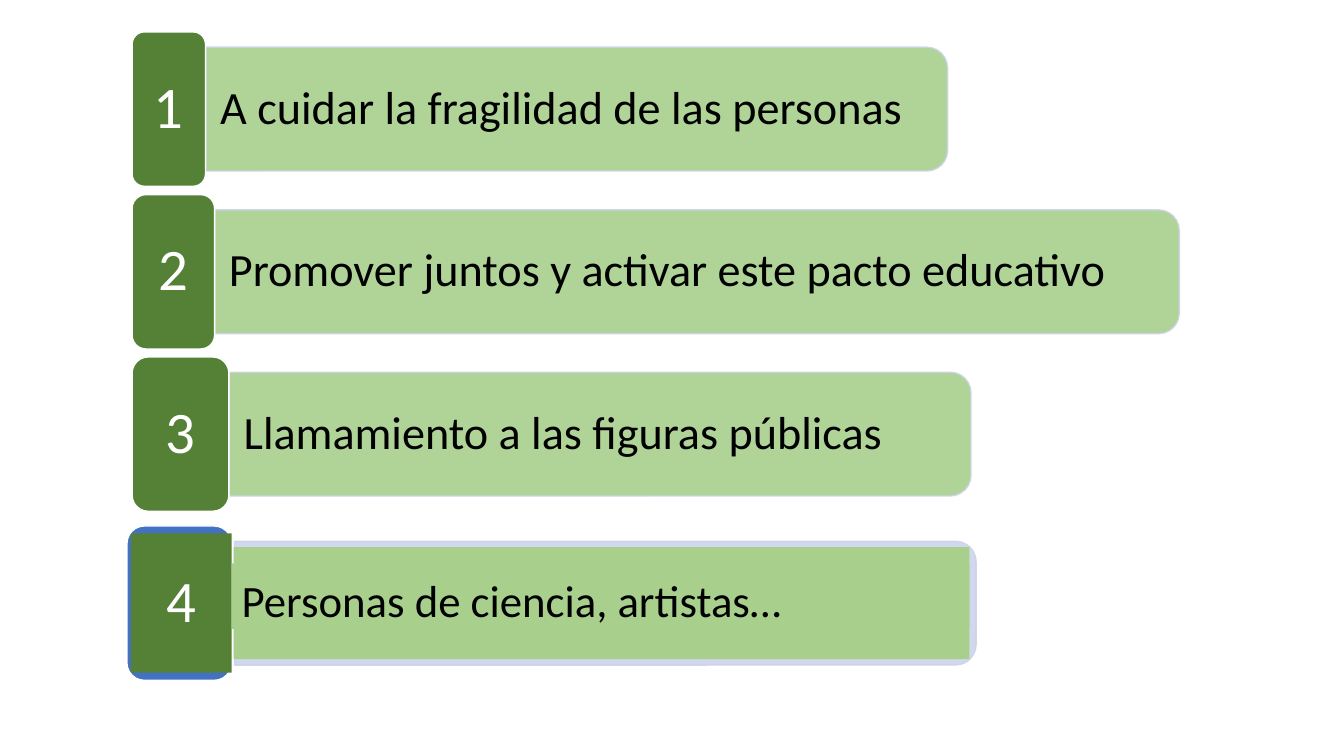
from lxml import etree
from pptx import Presentation
from pptx.dml.color import RGBColor
from pptx.enum.shapes import MSO_SHAPE
from pptx.enum.text import MSO_ANCHOR, PP_ALIGN
from pptx.oxml.ns import qn
from pptx.util import Cm, Pt

RECT = MSO_SHAPE.RECTANGLE
ROUNDED = MSO_SHAPE.ROUNDED_RECTANGLE
ROUND_TOP = MSO_SHAPE.ROUND_2_SAME_RECTANGLE
MIDDLE, TOP = MSO_ANCHOR.MIDDLE, MSO_ANCHOR.TOP
LEFT, CENTER = PP_ALIGN.LEFT, PP_ALIGN.CENTER

DARK_GREEN, LIGHT_GREEN = "548135", "A8D08C"
BLUE, LAVENDER = "4372C3", "CCD3EA"
WHITE, BLACK = "FFFFFF", "000000"

TAB_H, BAR_H, PANEL_H = 3.89, 3.12, 2.82


def add_box(kind, x, y, w, h, fill, line=None, alpha=None):
    """Add a preset shape; lengths in cm, alpha in percent."""
    sp = s.shapes.add_shape(kind, Cm(x), Cm(y), Cm(w), Cm(h))
    sp.shadow.inherit = False
    sp.fill.solid()
    sp.fill.fore_color.rgb = RGBColor.from_string(fill)
    if line:
        sp.line.color.rgb = RGBColor.from_string(line)
        sp.line.width = Pt(1)
    else:
        sp.line.fill.background()
    if alpha:
        for color in sp._element.spPr.iter(qn("a:srgbClr")):
            etree.SubElement(color, qn("a:alpha"), val=str(alpha * 1000))
    return sp


def write(sp, text, size, color, align, spacing=0.9, anchor=MIDDLE, inset=(0, 0)):
    """Put one line of text in a shape; inset is (side, top) in cm."""
    tf = sp.text_frame
    tf.word_wrap = True
    tf.vertical_anchor = anchor
    tf.margin_left = tf.margin_right = Cm(inset[0])
    tf.margin_top = tf.margin_bottom = Cm(inset[1])
    p = tf.paragraphs[0]
    p.text = text
    p.alignment = align
    p.line_spacing = spacing
    p.font.name = "Calibri"
    p.font.size = Pt(size)
    p.font.color.rgb = RGBColor.from_string(color)


prs = Presentation()
prs.slide_width, prs.slide_height = Cm(33.87), Cm(19.05)
s = prs.slides.add_slide(prs.slide_layouts[6])

# Rows: centre y, tab x, tab width, tab fill, bar x, bar length, bar fill, label
rows = [
    (2.75, 3.33, 1.85, DARK_GREEN, 5.19, 18.69, LIGHT_GREEN,
     "A cuidar la fragilidad de las personas"),
    (6.85, 3.33, 2.08, DARK_GREEN, 5.41, 24.31, LIGHT_GREEN,
     "Promover juntos y activar este pacto educativo"),
    (10.94, 3.33, 2.44, DARK_GREEN, 5.78, 18.69, LIGHT_GREEN,
     "Llamamiento a las figuras públicas"),
    (15.2, 3.2, 2.64, BLUE, 5.91, 18.69, LAVENDER, None),
]
for number, row in enumerate(rows, 1):
    cy, tab_x, tab_w, tab_fill, bar_x, bar_w, bar_fill, label = row

    # Bar, turned so that its rounded corners face right
    bar = add_box(ROUND_TOP, bar_x + (bar_w - BAR_H) / 2, cy - bar_w / 2,
                  BAR_H, bar_w, bar_fill, LAVENDER, 90)
    bar.rotation = 90
    bar.adjustments[0], bar.adjustments[1] = 0.167, 0

    # Number tab
    tab = add_box(ROUNDED, tab_x, cy - TAB_H / 2, tab_w, TAB_H, tab_fill, WHITE)
    tab.adjustments[0] = 0.167

    # Number and label
    if label:
        write(tab, str(number), 42, WHITE, CENTER)
        box = s.shapes.add_textbox(Cm(bar_x), Cm(cy - PANEL_H / 2),
                                   Cm(bar_w - 0.15), Cm(PANEL_H))
        write(box, label, 33, BLACK, LEFT, inset=(0.36, 0.18))

# Square panels that cover the last row
number_panel = add_box(RECT, 3.3, 13.44, 2.54, 3.51, DARK_GREEN)
write(number_panel, "4", 42, WHITE, CENTER)
add_box(RECT, 5.89, 13.79, 18.54, PANEL_H, LIGHT_GREEN)
strip = add_box(RECT, 5.84, 14.2, 18.59, 1.65, LIGHT_GREEN)
write(strip, "Personas de ciencia, artistas…", 32, BLACK, LEFT, 1.07, TOP, (0.25, 0.13))

prs.save("out.pptx")
